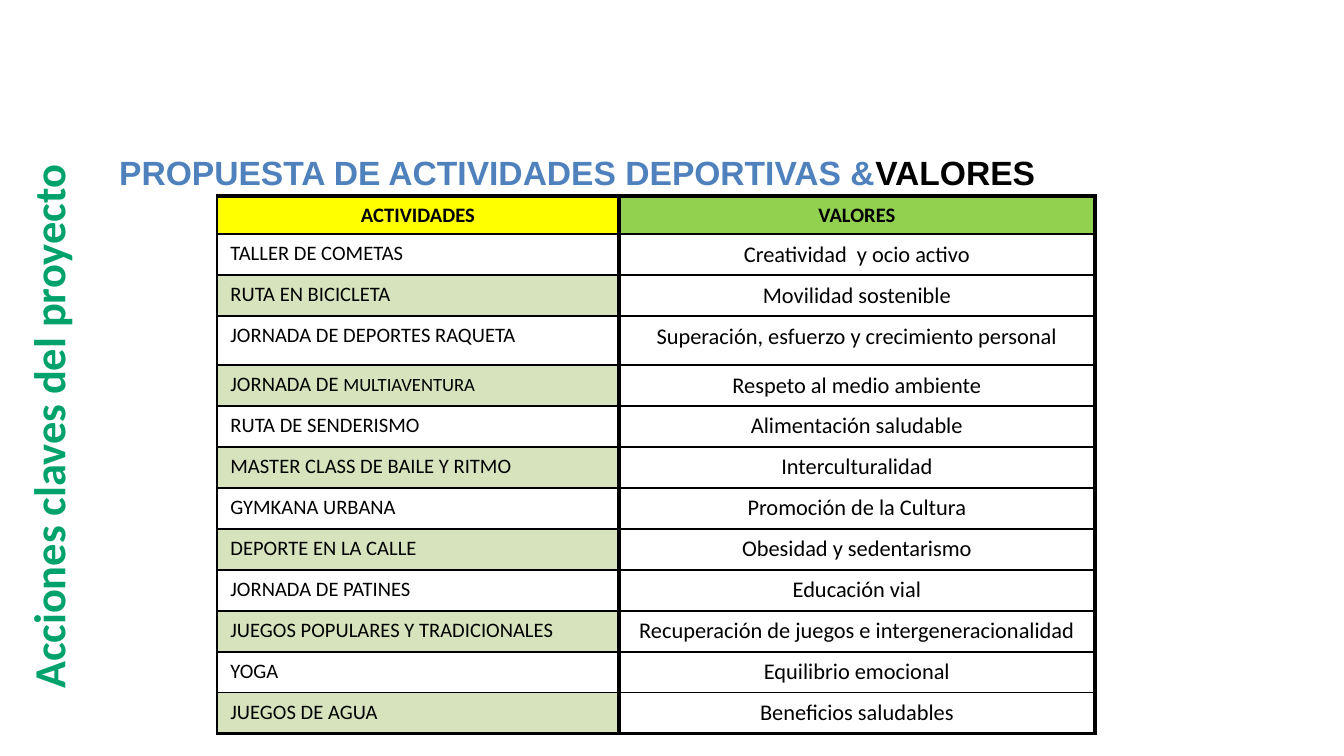
from dataclasses import dataclass

import pptx
import pptx.dml.color
import pptx.enum.text
import pptx.oxml
import pptx.oxml.ns
import pptx.util

EMU_PER_PX = 914400 / 134.4
ALIGN = pptx.enum.text.PP_ALIGN
ANCHOR = pptx.enum.text.MSO_ANCHOR
BLACK, YELLOW, GREEN, PALE_GREEN = "000000", "FFFF00", "92D050", "D6E3BC"
THIN, THICK = 1, 2


@dataclass
class Span:
    text: str
    size: float
    color: str = BLACK
    bold: bool = False
    face: str = "Calibri"


@dataclass
class Activity:
    label: list[Span]
    value: str


def px(length: int) -> int:
    return round(length * EMU_PER_PX)


def rgb(color: str) -> pptx.dml.color.RGBColor:
    return pptx.dml.color.RGBColor.from_string(color)


def write(paragraph, spans: list[Span], align=ALIGN.LEFT) -> None:
    paragraph.alignment = align
    for span in spans:
        run = paragraph.add_run()
        run.text = span.text
        formats = {"name": span.face, "size": pptx.util.Pt(span.size), "bold": span.bold}
        for attribute, setting in formats.items():
            setattr(run.font, attribute, setting)
        run.font.color.rgb = rgb(span.color)


def add_text(slide, box: tuple[int, int, int, int], spans: list[Span]):
    label = slide.shapes.add_textbox(*map(px, box))
    label.text_frame.word_wrap = True
    write(label.text_frame.paragraphs[0], spans)
    return label


def set_borders(cell, widths: dict[str, int]) -> None:
    properties = cell._tc.get_or_add_tcPr()
    for position, (side, width) in enumerate(widths.items()):
        line = pptx.oxml.parse_xml(
            f'<a:ln{side} {pptx.oxml.ns.nsdecls("a")} w="{pptx.util.Pt(width)}">'
            f'<a:solidFill><a:srgbClr val="{BLACK}"/></a:solidFill></a:ln{side}>'
        )
        properties.insert(position, line)


def fill_cell(cell, spans: list[Span], align, color: str | None, widths: dict[str, int]) -> None:
    write(cell.text_frame.paragraphs[0], spans, align)
    if color:
        cell.fill.solid()
        cell.fill.fore_color.rgb = rgb(color)
    else:
        cell.fill.background()
    set_borders(cell, widths)


def activity(label: str, value: str) -> Activity:
    return Activity([Span(label, 11)], value)


ACTIVITIES = [
    activity("TALLER DE COMETAS", "Creatividad  y ocio activo"),
    activity("RUTA EN BICICLETA", "Movilidad sostenible"),
    activity("JORNADA DE DEPORTES RAQUETA", "Superación, esfuerzo y crecimiento personal"),
    Activity([Span("JORNADA DE ", 11), Span("MULTIAVENTURA", 10)], "Respeto al medio ambiente"),
    activity("RUTA DE SENDERISMO", "Alimentación saludable"),
    activity("MASTER CLASS DE BAILE Y RITMO", "Interculturalidad"),
    activity("GYMKANA URBANA", "Promoción de la Cultura"),
    activity("DEPORTE EN LA CALLE", "Obesidad y sedentarismo"),
    activity("JORNADA DE PATINES", "Educación vial"),
    activity("JUEGOS POPULARES Y TRADICIONALES", "Recuperación de juegos e intergeneracionalidad"),
    activity("YOGA", "Equilibrio emocional"),
    activity("JUEGOS DE AGUA", "Beneficios saludables"),
]
COLUMN_WIDTHS = [402, 476]
ROW_HEIGHTS = [38, 41, 41, 49] + [41] * 9


def add_activities(slide) -> None:
    frame = slide.shapes.add_table(
        len(ROW_HEIGHTS), len(COLUMN_WIDTHS),
        px(217), px(196), px(sum(COLUMN_WIDTHS)), px(sum(ROW_HEIGHTS)),
    )
    table = frame.table
    table.first_row = table.horz_banding = False
    for column, width in zip(table.columns, COLUMN_WIDTHS):
        column.width = px(width)
    for row, height in zip(table.rows, ROW_HEIGHTS):
        row.height = px(height)

    # Heading row, then activities with every second one shaded
    rows = [
        [([Span("ACTIVIDADES", 11, bold=True)], ALIGN.CENTER, YELLOW),
         ([Span("VALORES", 11, bold=True)], ALIGN.CENTER, GREEN)]
    ]
    for index, item in enumerate(ACTIVITIES):
        rows.append([
            (item.label, ALIGN.LEFT if index else ALIGN.JUSTIFY, PALE_GREEN if index % 2 else None),
            ([Span(item.value, 12)], ALIGN.CENTER, None),
        ])
    for r, row in enumerate(rows):
        for c, (spans, align, color) in enumerate(row):
            widths = {
                "L": THICK if c else THIN,
                "R": THICK,
                "T": THIN if r else THICK,
                "B": THICK if r == len(rows) - 1 else THIN,
            }
            fill_cell(table.cell(r, c), spans, align, color, widths)


def main() -> None:
    deck = pptx.Presentation()
    deck.slide_width, deck.slide_height = px(1344), px(756)
    slide = deck.slides.add_slide(deck.slide_layouts[6])

    # Vertical section name
    section = add_text(slide, (-227, 360, 590, 94),
                       [Span("Acciones claves del proyecto", 23.8, "00A26C", True)])
    section.rotation = 270
    section.text_frame.margin_top = 0
    section.text_frame.vertical_anchor = ANCHOR.TOP

    # Title with hanging indent
    title = add_text(slide, (106, 145, 1238, 52), [
        Span("PROPUESTA DE ACTIVIDADES DEPORTIVAS &", 18, "4F81BD", True, "Arial"),
        Span("VALORES", 18, BLACK, True, "Arial"),
    ])
    indents = title.text_frame.paragraphs[0]._p.get_or_add_pPr()
    for attribute, length in {"marL": 51, "indent": -51}.items():
        indents.set(attribute, str(px(length)))

    # Activities and the values they promote
    add_activities(slide)
    deck.save("out.pptx")


if __name__ == "__main__":
    main()
